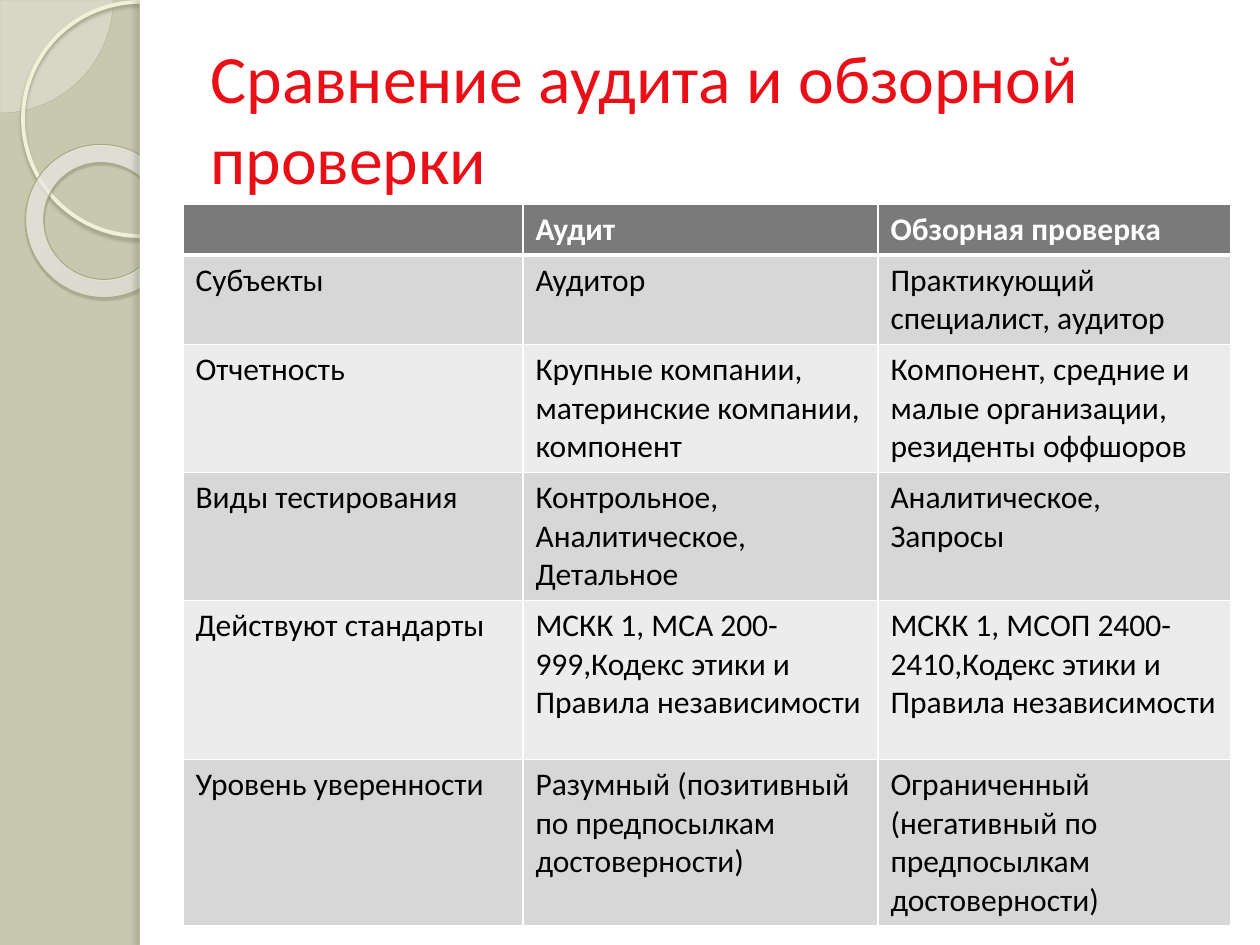
from lxml.etree import SubElement
from pptx import Presentation
from pptx.dml.color import RGBColor
from pptx.enum.shapes import MSO_SHAPE as Kind
from pptx.enum.text import MSO_ANCHOR as Anchor, MSO_AUTO_SIZE as AutoSize, PP_ALIGN as Align
from pptx.oxml import parse_xml
from pptx.oxml.ns import nsdecls, qn
from pptx.util import Pt

SCALE = 914400 / 126
FONT = "Calibri"
COLORS = {
    "background": "C8C8B1", "panel": "FFFFFF", "title": "EA0F16",
    "header": "7A7A7A", "odd": "D7D7D7", "even": "ECECEC",
    "header text": "FFFFFF", "body text": "000000", "border": "FFFFFF",
    "pie": "F8F8F2", "pie line": "B5B58E", "ring line": "F1F1D7",
    "donut line": "ABAB83", "ring shadow": "98987F",
    "donut shadow": "4E4E3D", "edge shadow": "646457",
}
DONUT_STOPS = [(0, "FBFBF5", 70), (70, "FEFEFA", 55), (100, "CCCC81", 60)]
DONUT_FOCUS = {"l": -408, "t": -50, "r": 508, "b": 150}

TITLE = "Сравнение аудита и обзорной проверки"
ROWS = [
    ("", "Аудит", "Обзорная проверка"),
    ("Субъекты", "Аудитор", "Практикующий специалист, аудитор"),
    ("Отчетность", "Крупные компании, материнские компании, компонент",
     "Компонент, средние и малые организации, резиденты оффшоров"),
    ("Виды тестирования", "Контрольное,\nАналитическое,\nДетальное",
     "Аналитическое, Запросы"),
    ("Действуют стандарты",
     "МСКК 1, МСА 200-999,Кодекс этики и Правила независимости",
     "МСКК 1, МСОП 2400-2410,Кодекс этики и Правила независимости"),
    ("Уровень уверенности", "Разумный (позитивный по предпосылкам достоверности)",
     "Ограниченный (негативный по предпосылкам достоверности)"),
]
COLUMN_WIDTHS = [340, 355, 353]
ROW_HEIGHTS = [49, 86, 122, 122, 159, 159]


def px(length):
    return round(length * SCALE)


def rgb(name):
    return RGBColor.from_string(COLORS[name])


def add_color(parent, value, opacity=100):
    color = SubElement(parent, qn("a:srgbClr"), val=value)
    if opacity < 100:
        SubElement(color, qn("a:alpha"), val=str(opacity * 1000))


def add_decor(page, kind, place, fill=None, line=None, shadow=None):
    shape = page.shapes.add_shape(kind, *map(px, place))
    shape.shadow.inherit = False
    if fill:
        shape.fill.solid()
        shape.fill.fore_color.rgb = rgb(fill)
    else:
        shape.fill.background()
    if line:
        name, width = line
        shape.line.color.rgb = rgb(name)
        shape.line.width = Pt(width)
    else:
        shape.line.fill.background()
    if shadow:
        name, opacity, blur, distance, angle = shadow
        effects = shape._element.spPr.find(qn("a:effectLst"))
        outer = SubElement(effects, qn("a:outerShdw"), blurRad=str(Pt(blur)),
                           dist=str(Pt(distance)), dir=str(angle * 60000),
                           algn="tl", rotWithShape="0")
        add_color(outer, COLORS[name], opacity)
    return shape


def set_radial_gradient(shape, stops, focus):
    gradient = parse_xml(f'<a:gradFill {nsdecls("a")} rotWithShape="1"/>')
    stop_list = SubElement(gradient, qn("a:gsLst"))
    for position, value, opacity in stops:
        stop = SubElement(stop_list, qn("a:gs"), pos=str(position * 1000))
        add_color(stop, value, opacity)
    circle = SubElement(gradient, qn("a:path"), path="circle")
    SubElement(circle, qn("a:fillToRect"),
               {side: str(share * 1000) for side, share in focus.items()})
    properties = shape._element.spPr
    properties.replace(properties.find(qn("a:noFill")), gradient)


def add_sidebar(page):
    pie = add_decor(page, Kind.PIE, (-113, -113, 226, 226), "pie", ("pie line", 0.25))
    pie.adjustments[0] = 0
    pie.adjustments[1] = 54
    pie_color = pie._element.spPr.find(qn("a:solidFill"))[0]
    SubElement(pie_color, qn("a:alpha"), val="33000")

    add_decor(page, Kind.OVAL, (23, 2, 234, 234), None, ("ring line", 2.15),
              ("ring shadow", 85, 2, 2, 90))
    donut = add_decor(page, Kind.DONUT, (25, 145, 155, 152), None, ("donut line", 0.58),
                      ("donut shadow", 35, 1, 1.2, 75))
    donut.adjustments[0] = 0.12
    donut.rotation = 38.6
    set_radial_gradient(donut, DONUT_STOPS, DONUT_FOCUS)

    add_decor(page, Kind.RECTANGLE, (140, 0, 1120, 945), "panel")
    add_decor(page, Kind.RECTANGLE, (140, 0, 10, 945), "panel", None,
              ("edge shadow", 25, 3, 3, 180))


def place_title(page):
    title = page.shapes.title
    title.left, title.top, title.width, title.height = map(px, (198, 38, 1033, 158))
    frame = title.text_frame
    frame.text = TITLE
    frame.word_wrap = True
    frame.auto_size = AutoSize.NONE
    frame.vertical_anchor = Anchor.MIDDLE
    para = frame.paragraphs[0]
    para.alignment = Align.LEFT
    para.font.name = FONT
    para.font.size = Pt(38.7)
    para.font.color.rgb = rgb("title")
    page.shapes._spTree.append(title._element)


def format_cell(cell, text, row):
    cell.text = text
    for para in cell.text_frame.paragraphs:
        para.font.name = FONT
        para.font.size = Pt(18)
        para.font.bold = row == 0
        para.font.color.rgb = rgb("body text" if row else "header text")
    properties = cell._tc.get_or_add_tcPr()
    for side in "LRTB":
        at_header_edge = (row, side) in ((0, "B"), (1, "T"))
        border = SubElement(properties, qn(f"a:ln{side}"),
                            w=str(Pt(3 if at_header_edge else 1)))
        add_color(SubElement(border, qn("a:solidFill")), COLORS["border"])
    cell.fill.solid()
    cell.fill.fore_color.rgb = rgb("header" if row == 0 else "odd" if row % 2 else "even")


def add_comparison(page):
    table = page.shapes.add_table(
        len(ROWS), len(COLUMN_WIDTHS), px(183), px(204),
        px(sum(COLUMN_WIDTHS)), px(sum(ROW_HEIGHTS))).table
    for column, width in zip(table.columns, COLUMN_WIDTHS):
        column.width = px(width)
    for row, (texts, height) in enumerate(zip(ROWS, ROW_HEIGHTS)):
        table.rows[row].height = px(height)
        for column, text in enumerate(texts):
            format_cell(table.cell(row, column), text, row)


def main():
    deck = Presentation()
    deck.slide_width, deck.slide_height = px(1260), px(945)
    page = deck.slides.add_slide(deck.slide_layouts[5])
    page.background.fill.solid()
    page.background.fill.fore_color.rgb = rgb("background")
    add_sidebar(page)
    place_title(page)
    add_comparison(page)
    deck.save("out.pptx")


if __name__ == "__main__":
    main()
